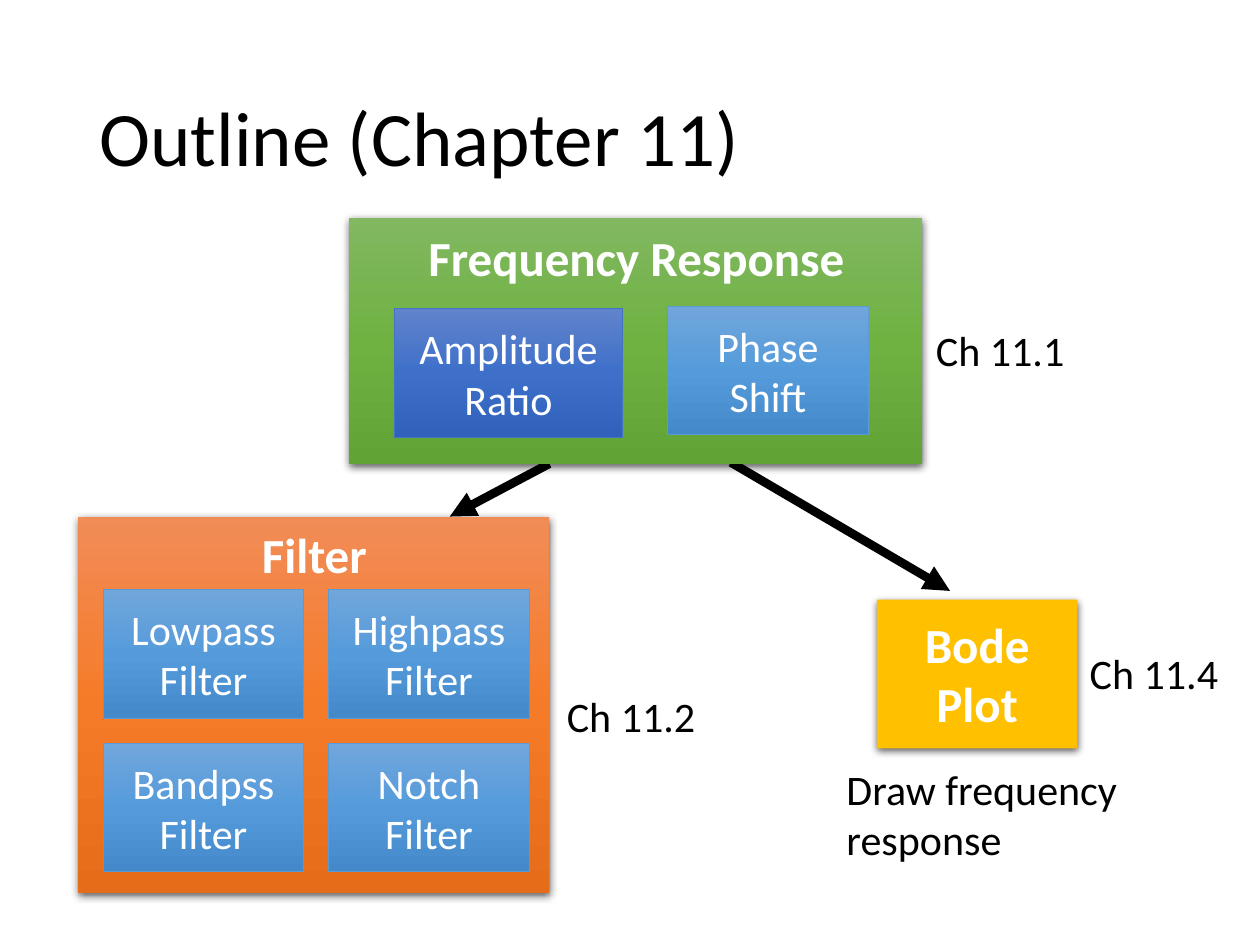
from lxml import etree
from pptx import Presentation
from pptx.dml.color import RGBColor
from pptx.enum.shapes import MSO_CONNECTOR, MSO_SHAPE
from pptx.enum.text import MSO_ANCHOR, PP_ALIGN
from pptx.oxml import parse_xml
from pptx.oxml.ns import nsdecls, qn
from pptx.util import Inches, Pt

RECT = MSO_SHAPE.RECTANGLE
LINE = MSO_CONNECTOR.STRAIGHT
TOP, MIDDLE = MSO_ANCHOR.TOP, MSO_ANCHOR.MIDDLE
LEFT, CENTER = PP_ALIGN.LEFT, PP_ALIGN.CENTER

FONT = "Calibri"
HEX = {"black": "000000", "white": "FFFFFF", "gold": "FFC000",
       "navy": "4472C4", "blue": "5B9BD5"}
FADES = {
    "orange": ["F18C57", "F67B28", "E56C19"],
    "green": ["81B861", "6FB242", "62A336"],
    "navy": ["6183CB", "3E70CA", "3062BB"],
    "blue": ["71A6DB", "559BDB", "448ACA"],
}

prs = Presentation()
prs.slide_width, prs.slide_height = Inches(10), Inches(7.5)
slide = prs.slides.add_slide(prs.slide_layouts[6])
shapes = slide.shapes


def write(shape, text, size, color, align=LEFT, bold=False, anchor=TOP, wrap=False):
    frame = shape.text_frame
    frame.word_wrap = wrap
    frame.vertical_anchor = anchor
    frame.text = text
    for para in frame.paragraphs:
        para.alignment = align
        para.font.name = FONT
        para.font.size = Pt(size)
        para.font.bold = bold
        para.font.color.rgb = RGBColor.from_string(HEX[color])


def add_box(place, hue, edge=False, shade=False):
    box = shapes.add_shape(RECT, *map(Inches, place))
    box.shadow.inherit = False
    if hue in FADES:
        stops = "".join(
            f'<a:gs pos="{50000 * i}"><a:srgbClr val="{tone}"/></a:gs>'
            for i, tone in enumerate(FADES[hue]))
        fade = parse_xml(
            f'<a:gradFill {nsdecls("a")} rotWithShape="1"><a:gsLst>{stops}</a:gsLst>'
            '<a:lin ang="5400000" scaled="0"/></a:gradFill>')
        box._element.spPr.find(qn("a:prstGeom")).addnext(fade)
    else:
        box.fill.solid()
        box.fill.fore_color.rgb = RGBColor.from_string(HEX[hue])
    if edge:
        box.line.color.rgb = RGBColor.from_string(HEX[hue])
        box.line.width = Pt(0.5)
    else:
        box.line.fill.background()
    if shade:
        box._element.spPr.find(qn("a:effectLst")).append(parse_xml(
            f'<a:outerShdw {nsdecls("a")} blurRad="{Pt(4.5)}" dist="{Pt(1.5)}" '
            'dir="5400000" algn="ctr" rotWithShape="0"><a:srgbClr val="000000">'
            '<a:alpha val="63000"/></a:srgbClr></a:outerShdw>'))
    return box


for ends in [(4.36, 3.68, 3.57, 4.1), (5.8, 3.67, 7.54, 4.69)]:
    arrow = shapes.add_connector(LINE, *map(Inches, ends))
    arrow.line.color.rgb = RGBColor.from_string(HEX["black"])
    arrow.line.width = Pt(5)
    etree.SubElement(arrow.line._get_or_add_ln(), qn("a:tailEnd"), type="triangle")
    etree.SubElement(arrow._element.spPr, qn("a:effectLst"))

title = shapes.add_textbox(*map(Inches, (0.69, 0.4, 8.62, 1.45)))
write(title, "Outline (Chapter 11)", 44, "black", anchor=MIDDLE, wrap=True)
title.text_frame.paragraphs[0].line_spacing = 0.9

for place, hue, spot, text in [
    ((0.62, 4.1, 3.74, 2.99), "orange", (1.01, 4.11, 2.97, 0.57), "Filter"),
    ((2.77, 1.73, 4.55, 1.95), "green", (3.24, 1.76, 3.62, 0.57), "Frequency Response"),
]:
    add_box(place, hue, shade=True)
    head = shapes.add_textbox(*map(Inches, spot))
    write(head, text, 28, "white", CENTER, bold=True)

tiles = [(3.13, 2.45, 1.81, "navy", "Amplitude\nRatio"),
         (5.3, 2.43, 1.59, "blue", "Phase\nShift")]
for i, kind in enumerate(["Lowpass", "Highpass", "Bandpss", "Notch"]):
    row, col = divmod(i, 2)
    tiles.append((0.82 + 1.79 * col, 4.68 + 1.22 * row, 1.59, "blue", f"{kind}\nFilter"))
for x, y, width, hue, text in tiles:
    tile = add_box((x, y, width, 1.02), hue, edge=True)
    write(tile, text, 24, "white", CENTER, anchor=MIDDLE, wrap=True)

add_box((6.96, 4.76, 1.59, 1.18), "gold", shade=True)
bode = add_box((6.98, 4.83, 1.55, 1.04), "gold")
write(bode, "Bode\nPlot", 28, "white", CENTER, bold=True, wrap=True)

for x, y, text in [(7.33, 2.53, "Ch 11.1"), (4.4, 5.43, "Ch 11.2"), (8.55, 5.09, "Ch 11.4")]:
    label = shapes.add_textbox(Inches(x), Inches(y), Inches(1.22), Inches(0.5))
    write(label, text, 24, "black")

note = shapes.add_textbox(*map(Inches, (6.62, 6.01, 2.43, 0.91)))
write(note, "Draw frequency response", 24, "black", wrap=True)

prs.save("out.pptx")
